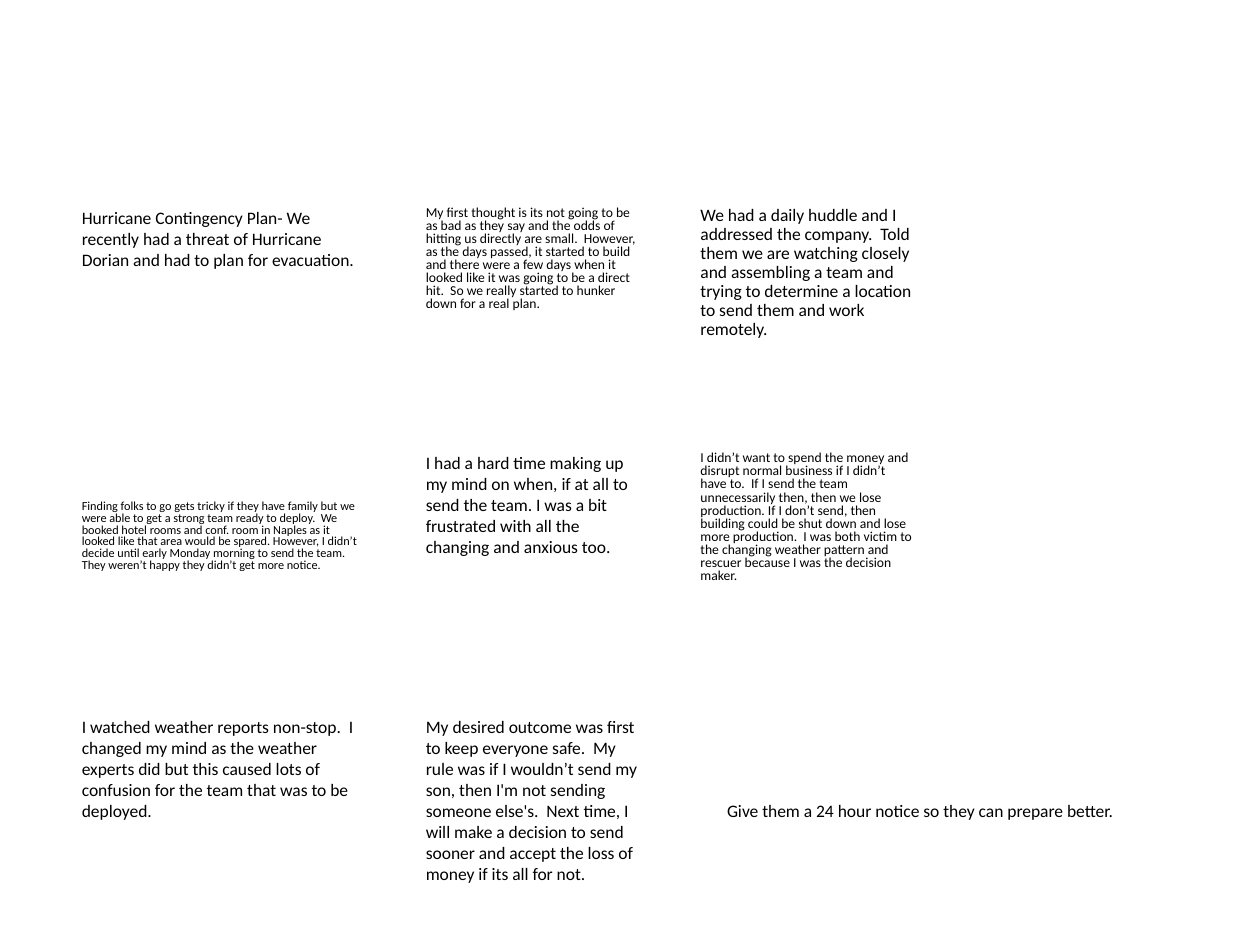
from pptx import Presentation
from pptx.dml.color import RGBColor
from pptx.enum.text import MSO_ANCHOR, MSO_AUTO_SIZE, PP_ALIGN
from pptx.util import Inches, Pt


def color(value):
    return RGBColor.from_string(value)


prs = Presentation()
prs.slide_width, prs.slide_height = Inches(10), Inches(7.5)
s = prs.slides.add_slide(prs.slide_layouts[6])

# Grid: column lefts and widths, row tops and heights
left, middle, right = (0.6, 2.33), (3.33, 1.8), (5.51, 1.8)
top, center, bottom = (1.59, 1.18), (3.54, 1.18), (5.63, 1.78)

# Story blocks: column, row, font size, line spacing, text
blocks = [
    (left, (1.59, 1.53), 10, 1.0,
     "Hurricane Contingency Plan- We recently had a threat of Hurricane Dorian "
     "and had to plan for evacuation."),
    (middle, top, 7.8, 0.8,
     "My first thought is its not going to be as bad as they say and the odds of "
     "hitting us directly are small.  However, as the days passed, it started to "
     "build and there were a few days when it looked like it was going to be a "
     "direct hit.  So we really started to hunker down for a real plan."),
    (right, top, 10, 0.9,
     "We had a daily huddle and I addressed the company.  Told them we are "
     "watching closely and assembling a team and trying to determine a location "
     "to send them and work remotely."),
    (left, (3.93, 0.8), 7, 0.8,
     "Finding folks to go gets tricky if they have family but we were able to get "
     "a strong team ready to deploy.  We booked hotel rooms and conf. room in "
     "Naples as it looked like that area would be spared. However, I didn’t "
     "decide until early Monday morning to send the team.  They weren’t happy "
     "they didn’t get more notice."),
    (middle, center, 10, 1.0,
     "I had a hard time making up my mind on when, if at all to send the team. "
     "I was a bit frustrated with all the changing and anxious too."),
    (right, center, 7.8, 0.8,
     "I didn’t want to spend the money and disrupt normal business if I didn’t "
     "have to.  If I send the team unnecessarily then, then we lose production. "
     "If I don’t send, then building could be shut down and lose more "
     "production.  I was both victim to the changing weather pattern and rescuer "
     "because I was the decision maker."),
    (left, bottom, 10, 1.0,
     "I watched weather reports non-stop.  I changed my mind as the weather "
     "experts did but this caused lots of confusion for the team that was to be "
     "deployed."),
    (middle, bottom, 10, 1.0,
     "My desired outcome was first to keep everyone safe.  My rule was if I "
     "wouldn’t send my son, then I'm not sending someone else's.  Next time, I "
     "will make a decision to send sooner and accept the loss of money if its "
     "all for not."),
    ((5.72, 3.68), (6.3, 1.1), 10, 1.0,
     "Give them a 24 hour notice so they can prepare better."),
]

for (x, w), (y, h), size, spacing, text in blocks:
    sp = s.shapes.add_textbox(Inches(x), Inches(y), Inches(w), Inches(h))
    sp.fill.solid()
    sp.fill.fore_color.rgb = color("FFFFFF")
    tf = sp.text_frame
    tf.word_wrap = True
    tf.auto_size = MSO_AUTO_SIZE.NONE
    tf.vertical_anchor = MSO_ANCHOR.TOP
    tf.margin_left = tf.margin_right = Inches(0.05)
    tf.margin_top = tf.margin_bottom = Inches(0.05)
    tf.text = text
    p = tf.paragraphs[0]
    p.alignment = PP_ALIGN.LEFT
    p.line_spacing = spacing
    r = p.runs[0]
    r.font.name = "Calibri"
    r.font.size = Pt(size)
    r.font.color.rgb = color("000000")

prs.save("out.pptx")
